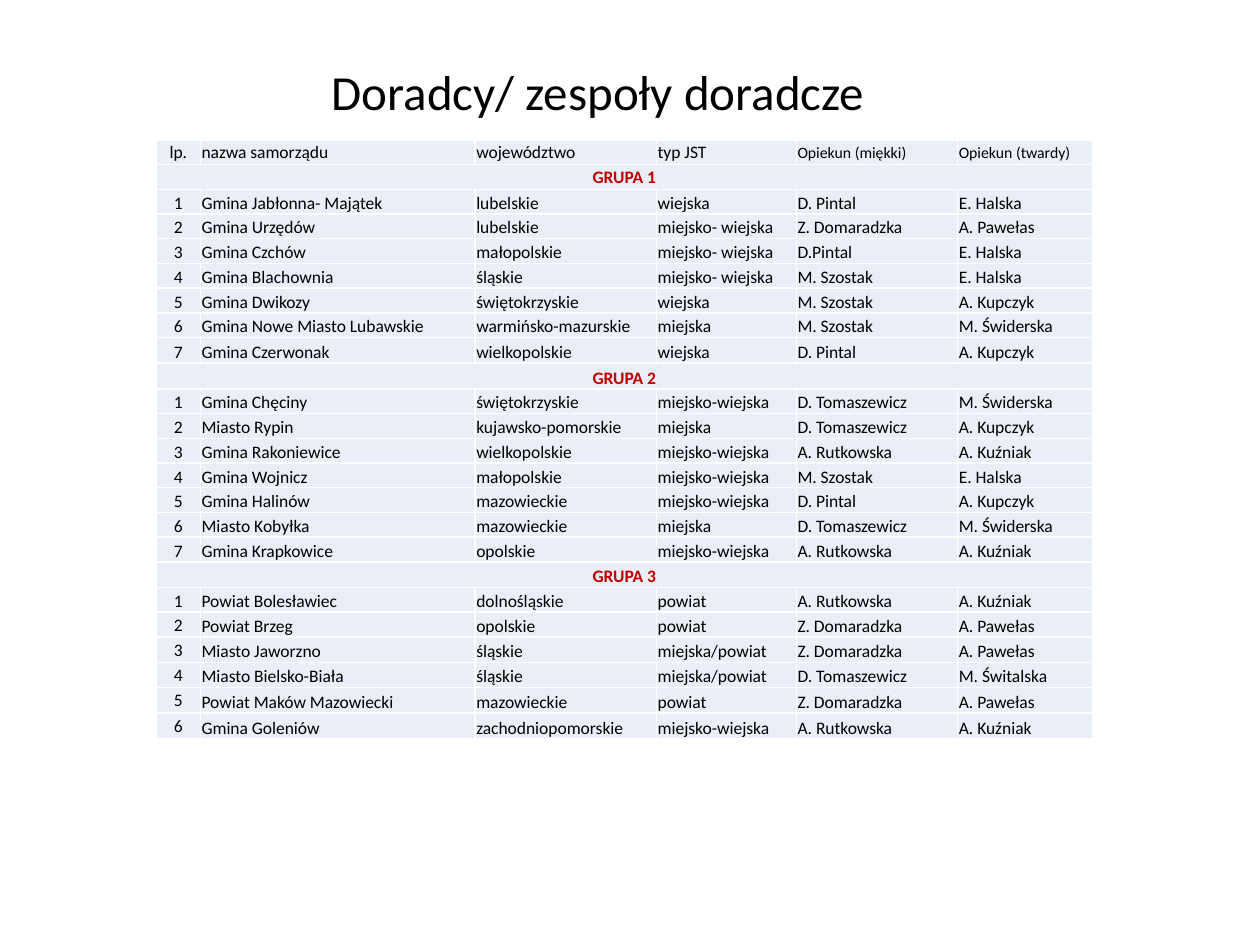
from dataclasses import dataclass

from lxml import etree
from pptx import Presentation
from pptx.dml.color import RGBColor
from pptx.enum.text import MSO_ANCHOR, MSO_AUTO_SIZE, PP_ALIGN
from pptx.oxml.ns import qn
from pptx.util import Inches, Pt

LEFT, CENTER = PP_ALIGN.LEFT, PP_ALIGN.CENTER
MIDDLE, BOTTOM = MSO_ANCHOR.MIDDLE, MSO_ANCHOR.BOTTOM
GROW = MSO_AUTO_SIZE.SHAPE_TO_FIT_TEXT

SLIDE_WIDTH, SLIDE_HEIGHT = Inches(10), Inches(7.5)
GRID_COLUMNS, GRID_ROWS = 100, 75


@dataclass(frozen=True)
class Theme:
    """Colours, font and type sizes of the slide."""
    font: str = "Calibri"
    text: str = "000000"
    group: str = "C00000"
    cell: str = "EAEFF7"
    border: str = "FFFFFF"
    title_size: float = 28
    body_size: float = 10
    small_size: float = 9
    border_width: float = 1


THEME = Theme()

TITLE = "Doradcy/ zespoły doradcze "
TABLE_LEFT, TABLE_TOP, TABLE_HEIGHT = 12.4, 11.1, 47.6
COLUMN_WIDTHS = (3.5, 21.8, 14.4, 11.1, 12.8, 10.7)
TALL_ROWS, TALL_RATIO = {8, 9, 17, 20, 22, 23}, 1.04
HEADER = ("lp.", "nazwa samorządu", "województwo", "typ JST",
          "Opiekun (miękki)", "Opiekun (twardy)")
SMALL_HEADERS = HEADER[4:]
GROUPS = {
    "GRUPA 1": (
        ("Gmina Jabłonna- Majątek", "lubelskie", "wiejska", "D. Pintal", "E. Halska"),
        ("Gmina Urzędów", "lubelskie", "miejsko- wiejska", "Z. Domaradzka", "A. Pawełas"),
        ("Gmina Czchów", "małopolskie", "miejsko- wiejska", "D.Pintal", "E. Halska"),
        ("Gmina Blachownia", "śląskie", "miejsko- wiejska", "M. Szostak", "E. Halska"),
        ("Gmina Dwikozy", "świętokrzyskie", "wiejska", "M. Szostak", "A. Kupczyk"),
        ("Gmina Nowe Miasto Lubawskie", "warmińsko-mazurskie", "miejska",
         "M. Szostak", "M. Świderska"),
        ("Gmina Czerwonak", "wielkopolskie", "wiejska", "D. Pintal", "A. Kupczyk"),
    ),
    "GRUPA 2": (
        ("Gmina Chęciny", "świętokrzyskie", "miejsko-wiejska", "D. Tomaszewicz", "M. Świderska"),
        ("Miasto Rypin", "kujawsko-pomorskie", "miejska", "D. Tomaszewicz", "A. Kupczyk"),
        ("Gmina Rakoniewice", "wielkopolskie", "miejsko-wiejska", "A. Rutkowska", "A. Kuźniak"),
        ("Gmina Wojnicz", "małopolskie", "miejsko-wiejska", "M. Szostak", "E. Halska"),
        ("Gmina Halinów", "mazowieckie", "miejsko-wiejska", "D. Pintal", "A. Kupczyk"),
        ("Miasto Kobyłka", "mazowieckie", "miejska", "D. Tomaszewicz", "M. Świderska"),
        ("Gmina Krapkowice", "opolskie", "miejsko-wiejska", "A. Rutkowska", "A. Kuźniak"),
    ),
    "GRUPA 3": (
        ("Powiat Bolesławiec", "dolnośląskie", "powiat", "A. Rutkowska", "A. Kuźniak"),
        ("Powiat Brzeg", "opolskie", "powiat", "Z. Domaradzka", "A. Pawełas"),
        ("Miasto Jaworzno", "śląskie", "miejska/powiat", "Z. Domaradzka", "A. Pawełas"),
        ("Miasto Bielsko-Biała", "śląskie", "miejska/powiat", "D. Tomaszewicz", "M. Świtalska"),
        ("Powiat Maków Mazowiecki", "mazowieckie", "powiat", "Z. Domaradzka", "A. Pawełas"),
        ("Gmina Goleniów", "zachodniopomorskie", "miejsko-wiejska", "A. Rutkowska", "A. Kuźniak"),
    ),
}


def across(columns):
    """Return the width of a number of grid columns."""
    return round(SLIDE_WIDTH * columns / GRID_COLUMNS)


def down(rows):
    """Return the height of a number of grid rows."""
    return round(SLIDE_HEIGHT * rows / GRID_ROWS)


def put_text(frame, text, *, size=THEME.body_size, color=THEME.text, bold=False, align=LEFT):
    """Write one formatted line into a text frame."""
    paragraph = frame.paragraphs[0]
    paragraph.alignment = align
    run = paragraph.add_run()
    run.text = text
    run.font.name = THEME.font
    run.font.size = Pt(size)
    run.font.bold = bold
    run.font.color.rgb = RGBColor.from_string(color)


def add_title(slide, text):
    """Add the centred slide title."""
    shape = slide.shapes.add_textbox(across(19.6), down(4.4), across(56.6), down(5.7))
    frame = shape.text_frame
    frame.word_wrap = True
    frame.auto_size = GROW
    put_text(frame, text, size=THEME.title_size, align=CENTER)


def add_borders(cell):
    """Draw a line on each side of a table cell."""
    properties = cell._tc.get_or_add_tcPr()
    for index, side in enumerate(("a:lnL", "a:lnR", "a:lnT", "a:lnB")):
        line = etree.Element(qn(side), w=str(Pt(THEME.border_width)))
        fill = etree.SubElement(line, qn("a:solidFill"))
        etree.SubElement(fill, qn("a:srgbClr"), val=THEME.border)
        properties.insert(index, line)


def fill_cell(cell, text, anchor, **text_format):
    """Fill, frame and label one table cell."""
    cell.fill.solid()
    cell.fill.fore_color.rgb = RGBColor.from_string(THEME.cell)
    cell.margin_left = cell.margin_right = cell.margin_top = Inches(0.01)
    cell.margin_bottom = 0
    cell.vertical_anchor = anchor
    add_borders(cell)
    put_text(cell.text_frame, text, **text_format)


def fill_row(table, row, texts, number_anchor, anchor):
    """Fill a row whose first column is centred."""
    for column, text in enumerate(texts):
        fill_cell(table.cell(row, column), text,
                  anchor if column else number_anchor,
                  size=THEME.small_size if text in SMALL_HEADERS else THEME.body_size,
                  align=LEFT if column else CENTER)


def fill_group_row(table, row, name, anchor):
    """Fill a group heading and merge it over all columns."""
    last = len(COLUMN_WIDTHS) - 1
    for column in range(last + 1):
        fill_cell(table.cell(row, column), "" if column else name, anchor,
                  color=THEME.group, bold=True, align=CENTER)
    table.cell(row, 0).merge(table.cell(row, last))


def add_advisers_table(slide):
    """Add the table of local governments and their advisers."""
    row_count = 1 + sum(1 + len(members) for members in GROUPS.values())
    shape = slide.shapes.add_table(
        row_count, len(COLUMN_WIDTHS), across(TABLE_LEFT), down(TABLE_TOP),
        across(sum(COLUMN_WIDTHS)), down(TABLE_HEIGHT))
    table = shape.table
    table.first_row = table.horz_banding = False
    for column, width in zip(table.columns, COLUMN_WIDTHS):
        column.width = across(width)
    weights = [TALL_RATIO if row in TALL_ROWS else 1 for row in range(row_count)]
    for row, weight in zip(table.rows, weights):
        row.height = down(TABLE_HEIGHT * weight / sum(weights))

    fill_row(table, 0, HEADER, MIDDLE, MIDDLE)
    row = 1
    for name, members in GROUPS.items():
        fill_group_row(table, row, name, MIDDLE if row == 1 else BOTTOM)
        for number, member in enumerate(members, 1):
            number_anchor = MIDDLE if name == "GRUPA 3" and number > 1 else BOTTOM
            fill_row(table, row + number, (str(number), *member), number_anchor, BOTTOM)
        row += 1 + len(members)


def main():
    """Build and save the slide."""
    presentation = Presentation()
    presentation.slide_width, presentation.slide_height = SLIDE_WIDTH, SLIDE_HEIGHT
    slide = presentation.slides.add_slide(presentation.slide_layouts[6])
    add_title(slide, TITLE)
    add_advisers_table(slide)
    presentation.save("out.pptx")


if __name__ == "__main__":
    main()
